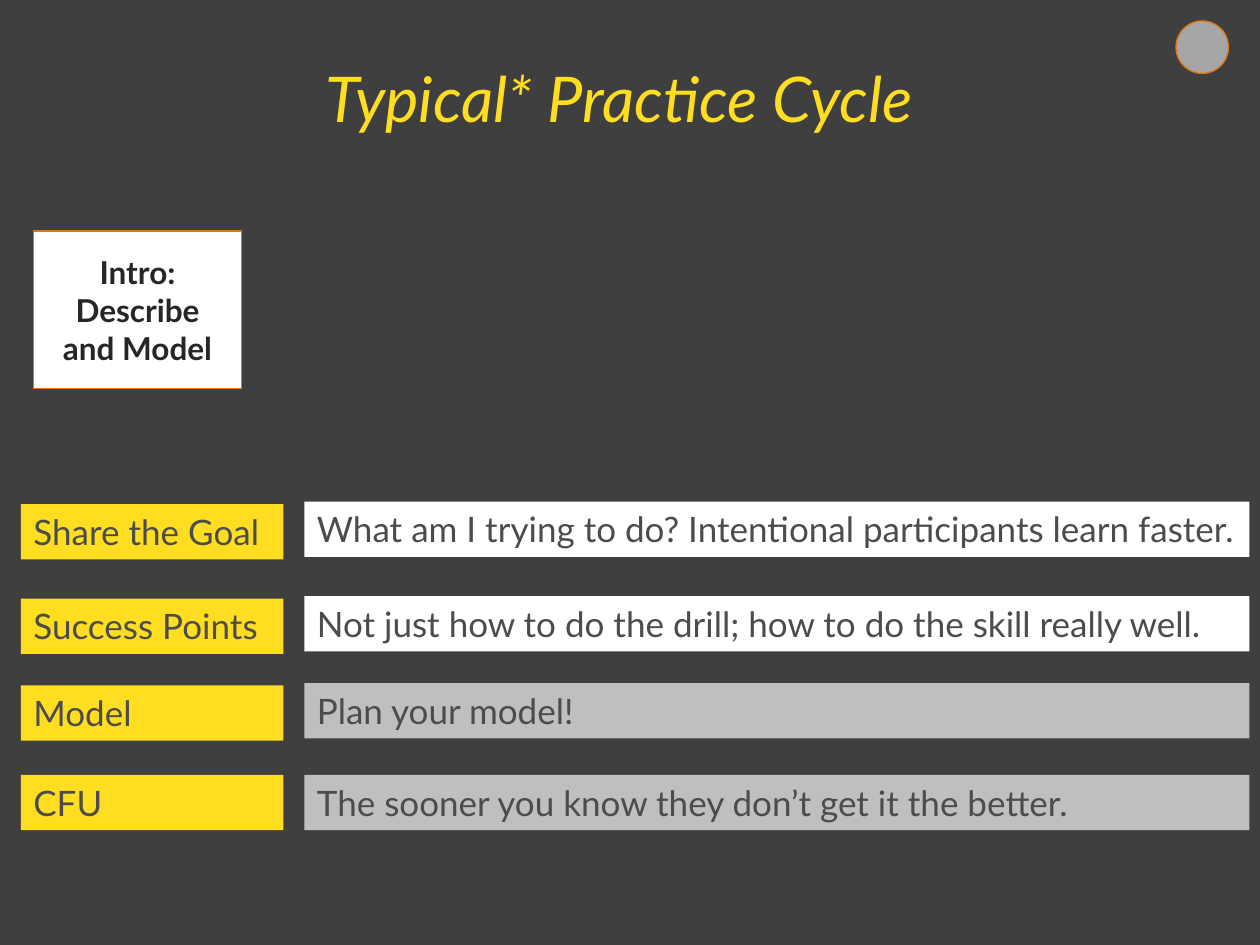
from pptx import Presentation
from pptx.dml.color import RGBColor
from pptx.enum.shapes import MSO_SHAPE
from pptx.enum.text import MSO_ANCHOR, PP_ALIGN
from pptx.util import Pt

RECTANGLE, OVAL = MSO_SHAPE.RECTANGLE, MSO_SHAPE.OVAL
TOP, MIDDLE = MSO_ANCHOR.TOP, MSO_ANCHOR.MIDDLE
LEFT, CENTER = PP_ALIGN.LEFT, PP_ALIGN.CENTER

CHARCOAL = RGBColor(0x3F, 0x3F, 0x3F)
YELLOW = RGBColor(0xFF, 0xDE, 0x22)
ORANGE = RGBColor(0xDD, 0x78, 0x11)
WHITE = RGBColor(0xFF, 0xFF, 0xFF)
SILVER = RGBColor(0xBF, 0xBF, 0xBF)
GRAY = RGBColor(0xA6, 0xA6, 0xA6)
INK = RGBColor(0x26, 0x26, 0x26)
SLATE = RGBColor(0x4C, 0x4C, 0x4C)

FONT = "Lato"
ROW_HEIGHT = 31.6
LABEL_WIDTH = 150
COLUMN_GAP = 12
STEPS = [
    (0, 1.4, "Share the Goal", WHITE,
     "What am I trying to do? Intentional participants learn faster."),
    (54, 1.4, "Success Points", WHITE,
     "Not just how to do the drill; how to do the skill really well."),
    (103.7, 1.4, "Model", SILVER, "Plan your model!"),
    (154.8, 0, "CFU", SILVER,
     "The sooner you know they don’t get it the better."),
]


def write(frame, text, size, color, align=LEFT, anchor=TOP, bold=False, italic=False):
    """Put one styled run into a wrapping text frame."""
    frame.word_wrap = True
    frame.vertical_anchor = anchor
    paragraph = frame.paragraphs[0]
    paragraph.alignment = align
    run = paragraph.add_run()
    run.text = text
    font = run.font
    font.name, font.size, font.color.rgb = FONT, Pt(size), color
    font.bold, font.italic = bold, italic


def add_panel(slide, kind, left, top, width, height, fill, outline=None):
    """Add a flat filled shape, outlined when a colour is given."""
    panel = slide.shapes.add_shape(kind, Pt(left), Pt(top), Pt(width), Pt(height))
    panel.shadow.inherit = False
    panel.fill.solid()
    panel.fill.fore_color.rgb = fill
    if outline is None:
        panel.line.fill.background()
    else:
        panel.line.color.rgb = outline
        panel.line.width = Pt(0.75)
    return panel


def add_title(slide, left, top, width, height):
    """Place the slide title in its placeholder."""
    title = slide.shapes.title
    title.left, title.top = Pt(left), Pt(top)
    title.width, title.height = Pt(width), Pt(height)
    write(title.text_frame, "Typical* Practice Cycle", 36, YELLOW,
          CENTER, MIDDLE, italic=True)


def add_intro(slide, left, top, width, height):
    """Add the outlined card for the first stage of the cycle."""
    intro = add_panel(slide, RECTANGLE, left, top, width, height, WHITE, ORANGE)
    write(intro.text_frame, "Intro: Describe and Model", 18, INK,
          CENTER, MIDDLE, bold=True)


def add_steps(slide, left, top, width):
    """Add a label and an explanation for each step."""
    advice_left = left + LABEL_WIDTH + COLUMN_GAP
    advice_width = width - LABEL_WIDTH - COLUMN_GAP
    for offset, lift, label, fill, advice in STEPS:
        row_top = top + offset
        cells = [
            (left, row_top, LABEL_WIDTH, YELLOW, label),
            (advice_left, row_top - lift, advice_width, fill, advice),
        ]
        for cell_left, cell_top, cell_width, color, text in cells:
            cell = add_panel(slide, RECTANGLE, cell_left, cell_top,
                             cell_width, ROW_HEIGHT, color)
            write(cell.text_frame, text, 20, SLATE)


def main():
    """Build and save the practice cycle slide."""
    deck = Presentation()
    deck.slide_width, deck.slide_height = Pt(720), Pt(540)
    slide = deck.slides.add_slide(deck.slide_layouts[5])
    slide.background.fill.solid()
    slide.background.fill.fore_color.rgb = CHARCOAL
    add_title(slide, 30, 21.6, 648, 68.4)
    add_intro(slide, 19.2, 132, 118.8, 90)
    add_panel(slide, OVAL, 672, 12, 30, 30, GRAY, ORANGE)
    add_steps(slide, 12, 288, 702)
    deck.save("out.pptx")


if __name__ == "__main__":
    main()
